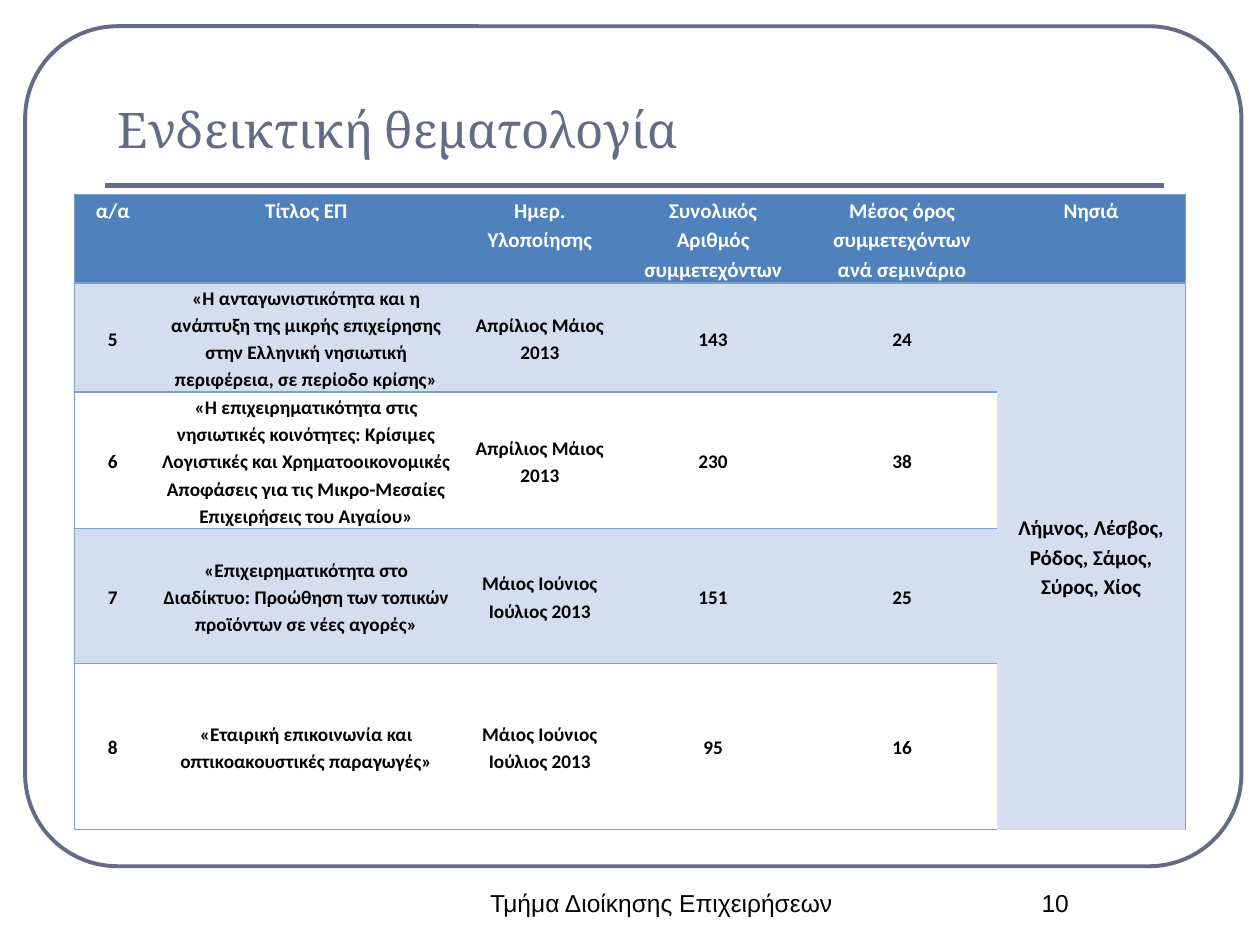
"""Build a slide with a table of seminar topics inside a rounded frame."""
import pptx
import pptx.dml.color
import pptx.enum.shapes
import pptx.enum.text
import pptx.oxml
import pptx.oxml.ns
import pptx.util
from lxml import etree

Pt = pptx.util.Pt
RGB = pptx.dml.color.RGBColor
ALIGN = pptx.enum.text.PP_ALIGN
ANCHOR = pptx.enum.text.MSO_ANCHOR
SLATE = RGB(0x64, 0x6B, 0x86)
BLUE = RGB(0x4F, 0x81, 0xBD)
PALE = RGB(0xD3, 0xDF, 0xEE)
EDGE = RGB(0x7B, 0xA0, 0xCD)
WHITE = RGB(255, 255, 255)
BLACK = RGB(0, 0, 0)

COLS = [44, 177, 90, 108, 108, 108]
TALL = [48.25, 58.3, 73.4, 77, 95]
ROWS = [
    ["α/α", "Τίτλος ΕΠ", "Ημερ. Υλοποίησης", "Συνολικός\nΑριθμός συμμετεχόντων",
     "Μέσος όρος\nσυμμετεχόντων ανά σεμινάριο", "Νησιά"],
    ["5", "«Η ανταγωνιστικότητα και η ανάπτυξη της μικρής επιχείρησης στην "
     "Ελληνική νησιωτική περιφέρεια, σε περίοδο κρίσης»",
     "Απρίλιος Μάιος 2013", "143", "24", "Λήμνος, Λέσβος, Ρόδος, Σάμος, Σύρος, Χίος"],
    ["6", "«Η επιχειρηματικότητα στις νησιωτικές κοινότητες: Κρίσιμες Λογιστικές και "
     "Χρηματοοικονομικές Αποφάσεις για τις Μικρο-Μεσαίες Επιχειρήσεις του Αιγαίου»",
     "Απρίλιος Μάιος 2013", "230", "38"],
    ["7", "«Επιχειρηματικότητα στο Διαδίκτυο: Προώθηση των τοπικών προϊόντων σε νέες αγορές»",
     "Μάιος Ιούνιος Ιούλιος 2013", "151", "25"],
    ["8", "«Εταιρική επικοινωνία και οπτικοακουστικές παραγωγές»",
     "Μάιος Ιούνιος Ιούλιος 2013", "95", "16"],
]


def style(item, form):
    """Set each attribute in a dict of format values."""
    for name, value in form.items():
        setattr(item, name, value)


def write(frame, text, face, size, color, bold=False, para=None):
    """Fill a text frame and format all its paragraphs."""
    frame.text = text
    for part in frame.paragraphs:
        style(part, para or {"alignment": ALIGN.CENTER})
        style(part.font, {"name": face, "size": Pt(size), "bold": bold})
        part.font.color.rgb = color


def add_title(slide, text):
    """Place and format the title."""
    title = slide.shapes.title
    style(title, {"left": Pt(60), "top": Pt(26), "width": Pt(606), "height": Pt(68)})
    style(title.text_frame, {"vertical_anchor": ANCHOR.BOTTOM, "word_wrap": True})
    write(title.text_frame, text, "Cambria", 28, SLATE, para={"alignment": ALIGN.LEFT})


def add_frame(slide):
    """Draw the rounded outline."""
    kind = pptx.enum.shapes.MSO_SHAPE.ROUNDED_RECTANGLE
    frame = slide.shapes.add_shape(kind, Pt(14.4), Pt(15), Pt(695), Pt(480))
    frame.adjustments[0] = 0.11
    frame.shadow.inherit = False
    frame.fill.background()
    frame.line.color.rgb = SLATE
    frame.line.width = Pt(2.25)


def add_rule(slide):
    """Draw the line under the title."""
    kind = pptx.enum.shapes.MSO_CONNECTOR.STRAIGHT
    rule = slide.shapes.add_connector(kind, Pt(60), Pt(105.8), Pt(665), Pt(105.8))
    rule.line.color.rgb = SLATE
    rule.line.width = Pt(3)
    etree.SubElement(rule._element.spPr, pptx.oxml.ns.qn("a:effectLst"))


def add_edges(cell, shown):
    """Set the four cell borders, drawing only the sides in shown."""
    space = pptx.oxml.ns.nsdecls("a")
    for spot, side in enumerate("LRTB"):
        fill = "<a:noFill/>"
        if side in shown:
            fill = f'<a:solidFill><a:srgbClr val="{EDGE}"/></a:solidFill>'
        line = f'<a:ln{side} {space} w="{Pt(1)}">{fill}</a:ln{side}>'
        cell._tc.get_or_add_tcPr().insert(spot, pptx.oxml.parse_xml(line))


def fill_cell(cell, row, col):
    """Fill one table cell by its place in the grid."""
    head, last = row == 0, col == len(COLS) - 1
    pad = Pt(3.6 if head or last else 5)
    style(cell, {"margin_left": pad, "margin_right": pad, "margin_top": 0, "margin_bottom": 0,
                 "vertical_anchor": ANCHOR.TOP if head else ANCHOR.MIDDLE})
    cell.fill.solid()
    cell.fill.fore_color.rgb = BLUE if head else PALE if last or row % 2 else WHITE
    if col < len(ROWS[row]):
        write(cell.text_frame, ROWS[row][col], "Calibri", 12 if head or last else 11,
              WHITE if head else BLACK, True,
              {"alignment": ALIGN.CENTER, "line_spacing": 1.15})
    shown = "L" if col == 0 else "R" if last else ""
    if not last or row < 2:
        shown += "T"
    if not last or row in (0, len(ROWS) - 1):
        shown += "B"
    add_edges(cell, shown)


def add_grid(slide):
    """Add the table of topics."""
    grid = slide.shapes.add_table(len(ROWS), len(COLS), Pt(42.5), Pt(111.3),
                                  Pt(sum(COLS)), Pt(sum(TALL))).table
    grid.horz_banding = False
    for col, width in zip(grid.columns, COLS):
        col.width = Pt(width)
    for row, height in zip(grid.rows, TALL):
        row.height = Pt(height)
    end = len(COLS) - 1
    grid.cell(1, end).merge(grid.cell(len(ROWS) - 1, end))
    for row in range(len(ROWS)):
        for col in range(len(COLS)):
            fill_cell(grid.cell(row, col), row, col)


def add_foot(slide, text, left, width):
    """Add one footer text."""
    box = slide.shapes.add_textbox(Pt(left), Pt(504), Pt(width), Pt(36))
    box.text_frame.word_wrap = True
    write(box.text_frame, text, "Arial", 14, BLACK)


def main():
    """Build and save the slide."""
    deck = pptx.Presentation()
    style(deck, {"slide_width": Pt(720), "slide_height": Pt(540)})
    slide = deck.slides.add_slide(deck.slide_layouts[5])
    add_frame(slide)
    add_rule(slide)
    add_title(slide, "Ενδεικτική θεματολογία")
    add_grid(slide)
    add_foot(slide, "Τμήμα Διοίκησης Επιχειρήσεων", 264, 228)
    add_foot(slide, "10", 540, 126)
    deck.save("out.pptx")


if __name__ == "__main__":
    main()
